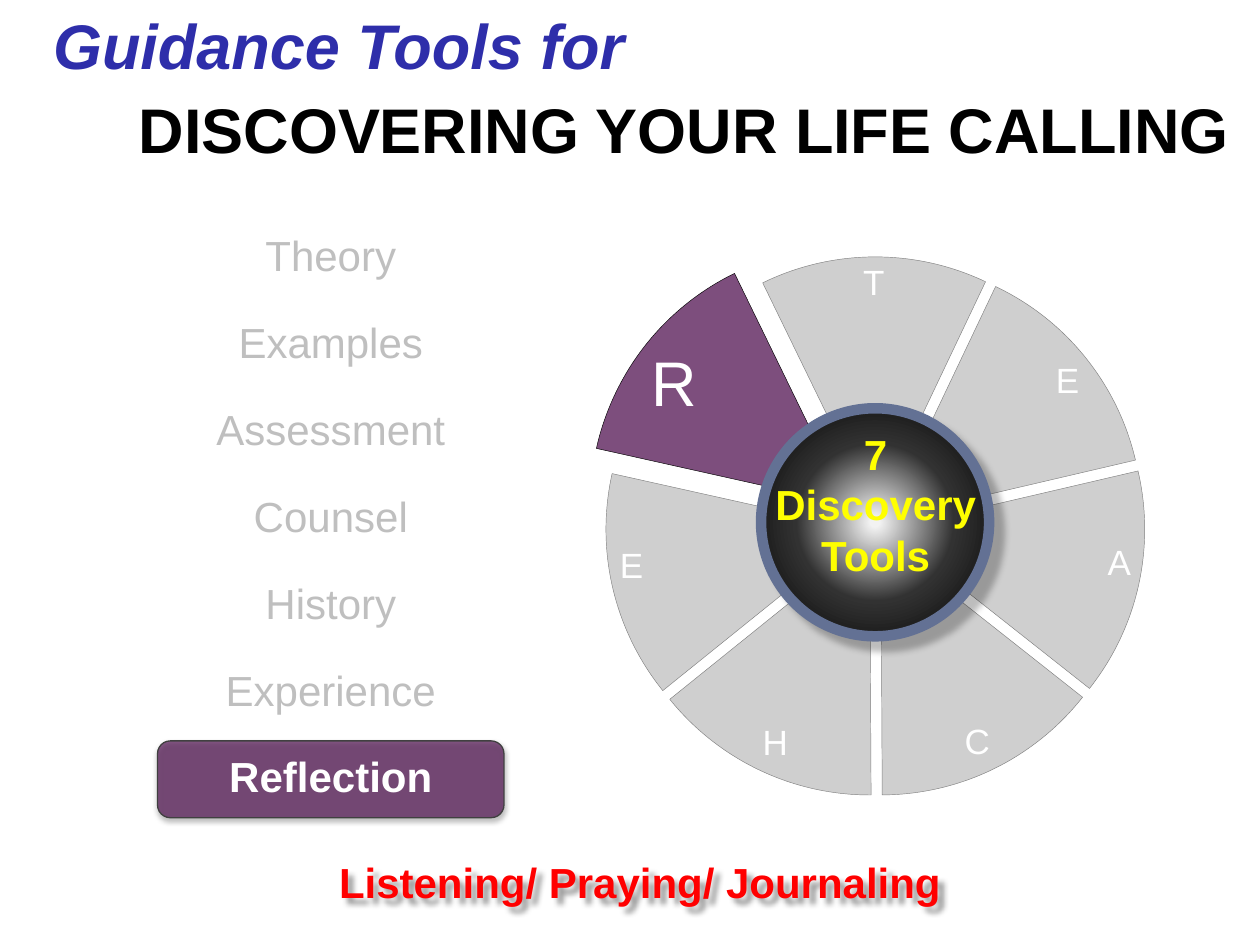
from pptx import Presentation
from pptx.chart.data import CategoryChartData
from pptx.dml.color import RGBColor
from pptx.enum.chart import XL_CHART_TYPE as ChartType, XL_LABEL_POSITION as LabelPosition
from pptx.enum.shapes import MSO_SHAPE as Preset
from pptx.enum.text import MSO_ANCHOR as Anchor, MSO_AUTO_SIZE as AutoSize, PP_ALIGN as Align
from pptx.oxml import parse_xml
from pptx.oxml.ns import nsdecls, qn
from pptx.util import Inches, Pt

FONT = "Arial"
BLACK = RGBColor(0x00, 0x00, 0x00)
WHITE = RGBColor(0xFF, 0xFF, 0xFF)
SILVER = RGBColor(0xBF, 0xBF, 0xBF)
GRAY = RGBColor(0x80, 0x80, 0x80)
CHARCOAL = RGBColor(0x40, 0x40, 0x40)
PURPLE = RGBColor(0x52, 0x14, 0x52)
BLUE = RGBColor(0x2E, 0x2E, 0xAA)
STEEL = RGBColor(0x63, 0x71, 0x94)
YELLOW = RGBColor(0xFF, 0xFF, 0x00)
RED = RGBColor(0xFF, 0x00, 0x00)

TOOLS = ["Theory", "Examples", "Assessment", "Counsel", "History", "Experience", "Reflection"]
CURRENT = len(TOOLS) - 1
LIST_LEFT, LIST_TOP, ROW_PITCH = 1.25, 1.74, 0.69
ROW_WIDTH, ROW_HEIGHT = 2.75, 0.61
HUB_LINES = ["7", "Discovery", "Tools"]
HUB_STOPS = [(3, "F2F2F2"), (49, "323232"), (100, "000000")]


def place(shape, left, top, width, height):
    """Move a shape to a position given in inches."""
    shape.left, shape.top = Inches(left), Inches(top)
    shape.width, shape.height = Inches(width), Inches(height)


def style_font(font, size, color, bold=False, italic=False):
    """Set the face, size, colour and weight of a font."""
    font.name, font.size, font.bold, font.italic = FONT, Pt(size), bold, italic
    font.color.rgb = color


def write_lines(shape, lines, size, color, bold=True, italic=False,
                anchor=Anchor.TOP, wrap=True, spacing=1.0):
    """Fill a shape with centred lines, one paragraph each."""
    frame = shape.text_frame
    frame.auto_size = AutoSize.NONE
    frame.word_wrap, frame.vertical_anchor = wrap, anchor
    for index, line in enumerate(lines):
        paragraph = frame.add_paragraph() if index else frame.paragraphs[0]
        paragraph.alignment, paragraph.line_spacing = Align.CENTER, spacing
        run = paragraph.add_run()
        run.text = line
        style_font(run.font, size, color, bold, italic)


def add_text(slide, box, lines, size, color, **options):
    """Add a text box with centred lines."""
    shape = slide.shapes.add_textbox(*map(Inches, box))
    write_lines(shape, lines, size, color, **options)
    return shape


def set_alpha(element, percent):
    """Make the first solid fill inside an element translucent."""
    color = element.find(f".//{qn('a:solidFill')}/{qn('a:srgbClr')}")
    color.append(parse_xml(f'<a:alpha {nsdecls("a")} val="{percent * 1000}"/>'))


def add_shadow(shape, alpha, blur, distance, angle):
    """Give a shape a soft black outer shadow."""
    shape.shadow.inherit = False
    effects = shape.element.spPr.find(qn("a:effectLst"))
    effects.append(parse_xml(
        f'<a:outerShdw {nsdecls("a")} blurRad="{Pt(blur)}" dist="{Pt(distance)}" '
        f'dir="{angle * 60000}" algn="ctr" rotWithShape="0"><a:srgbClr val="000000">'
        f'<a:alpha val="{alpha * 1000}"/></a:srgbClr></a:outerShdw>'))


def add_panel(slide, preset, box, color, width):
    """Add an outlined preset shape."""
    shape = slide.shapes.add_shape(preset, *map(Inches, box))
    shape.line.color.rgb, shape.line.width = color, Pt(width)
    return shape


def add_headings(slide):
    """Add the two heading lines."""
    title = slide.shapes.title
    place(title, 0.96, 0.67, 8.94, 0.71)
    write_lines(title, ["DISCOVERING YOUR LIFE CALLING"], 36, BLACK, wrap=False)
    add_text(slide, (0.3, 0, 4.78, 0.71), ["Guidance Tools for"], 36, BLUE,
             italic=True, wrap=False)


def add_tool_list(slide):
    """Add the column of tools with the current one highlighted."""
    for row, tool in enumerate(TOOLS):
        box = (LIST_LEFT, LIST_TOP + row * ROW_PITCH, ROW_WIDTH, ROW_HEIGHT)
        current = row == CURRENT
        if current:
            panel = add_panel(slide, Preset.ROUNDED_RECTANGLE, box, CHARCOAL, 0.75)
            panel.fill.solid()
            panel.fill.fore_color.rgb = PURPLE
            set_alpha(panel.element.spPr, 70)
            add_shadow(panel, 35, 3.1, 1.8, 90)
        add_text(slide, box, [tool], 24, WHITE if current else SILVER, bold=current,
                 anchor=Anchor.MIDDLE, spacing=0.9)


def style_slice(point, current):
    """Colour one slice and label it with its category."""
    point.format.fill.solid()
    point.format.fill.fore_color.rgb = PURPLE if current else SILVER
    point.format.line.color.rgb = BLACK if current else GRAY
    point.format.line.width = Pt(0.25)
    style_font(point.data_label.font, 36 if current else 20, WHITE)
    point.data_label.position = LabelPosition.INSIDE_END


def arrange_wheel(chart):
    """Set the plot area, rotation, labels and slice explosion of the wheel."""
    plot_area = chart.element.find(f".//{qn('c:plotArea')}")
    for layout in plot_area.findall(qn("c:layout")):
        plot_area.remove(layout)
    modes = '<c:layoutTarget val="inner"/><c:xMode val="edge"/><c:yMode val="edge"/>'
    shares = "".join(f'<c:{name} val="{value}"/>' for name, value in
                     zip("xywh", (0.259, 0.068, 0.519, 0.864)))
    plot_area.insert(0, parse_xml(
        f'<c:layout {nsdecls("c")}><c:manualLayout>{modes}{shares}</c:manualLayout></c:layout>'))
    pie = plot_area.find(qn("c:pieChart"))
    for angle in pie.findall(qn("c:firstSliceAng")):
        pie.remove(angle)
    pie.append(parse_xml(f'<c:firstSliceAng {nsdecls("c")} val="334"/>'))
    for label in pie.iter(qn("c:dLbl")):
        label.find(qn("c:showVal")).set("val", "0")
        label.find(qn("c:showCatName")).set("val", "1")
    slices = list(pie.iter(qn("c:dPt")))
    for element in slices:
        set_alpha(element, 75)
    current_format = slices[CURRENT].find(qn("c:spPr"))
    for element, percent in ((slices[0], 5), (current_format, 14)):
        element.addprevious(parse_xml(f'<c:explosion {nsdecls("c")} val="{percent}"/>'))


def add_wheel(slide):
    """Add the pie chart of seven equal tools."""
    data = CategoryChartData(number_format="General")
    data.categories = [tool[0] for tool in TOOLS]
    data.add_series(" ".join(HUB_LINES), [14] * len(TOOLS))
    box = map(Inches, (2.67, 1.68, 8.25, 5))
    chart = slide.shapes.add_chart(ChartType.PIE, *box, data).chart
    chart.has_legend = chart.has_title = False
    style_font(chart.font, 10, BLACK)
    plot = chart.plots[0]
    plot.vary_by_categories = True
    for index in range(len(TOOLS)):
        style_slice(plot.series[0].points[index], index == CURRENT)
    arrange_wheel(chart)


def add_hub(slide):
    """Add the glowing disc in the middle of the wheel."""
    hub = add_panel(slide, Preset.OVAL, (6.04, 3.24, 1.81, 1.81), STEEL, 6)
    hub.fill.background()
    stops = "".join(f'<a:gs pos="{share * 1000}"><a:srgbClr val="{color}"/></a:gs>'
                    for share, color in HUB_STOPS)
    properties = hub.element.spPr
    properties.replace(properties.find(qn("a:noFill")), parse_xml(
        f'<a:gradFill {nsdecls("a")} rotWithShape="1"><a:gsLst>{stops}</a:gsLst>'
        '<a:path path="circle"><a:fillToRect l="50000" t="50000" r="50000" b="50000"/>'
        '</a:path></a:gradFill>'))
    add_shadow(hub, 25, 4, 8, 45)
    add_text(slide, (5.91, 3.35, 2.08, 1.31), HUB_LINES, 24, YELLOW)


def main():
    """Build and save the slide."""
    presentation = Presentation()
    presentation.slide_width, presentation.slide_height = Inches(10), Inches(7.5)
    slide = presentation.slides.add_slide(presentation.slide_layouts[5])
    add_wheel(slide)
    add_tool_list(slide)
    add_hub(slide)
    caption = add_text(slide, (2.33, 6.75, 5.5, 0.4),
                       ["Listening/ Praying/ Journaling"], 24, RED)
    add_shadow(caption, 40, 3, 4, 45)
    add_headings(slide)
    presentation.save("out.pptx")


if __name__ == "__main__":
    main()
